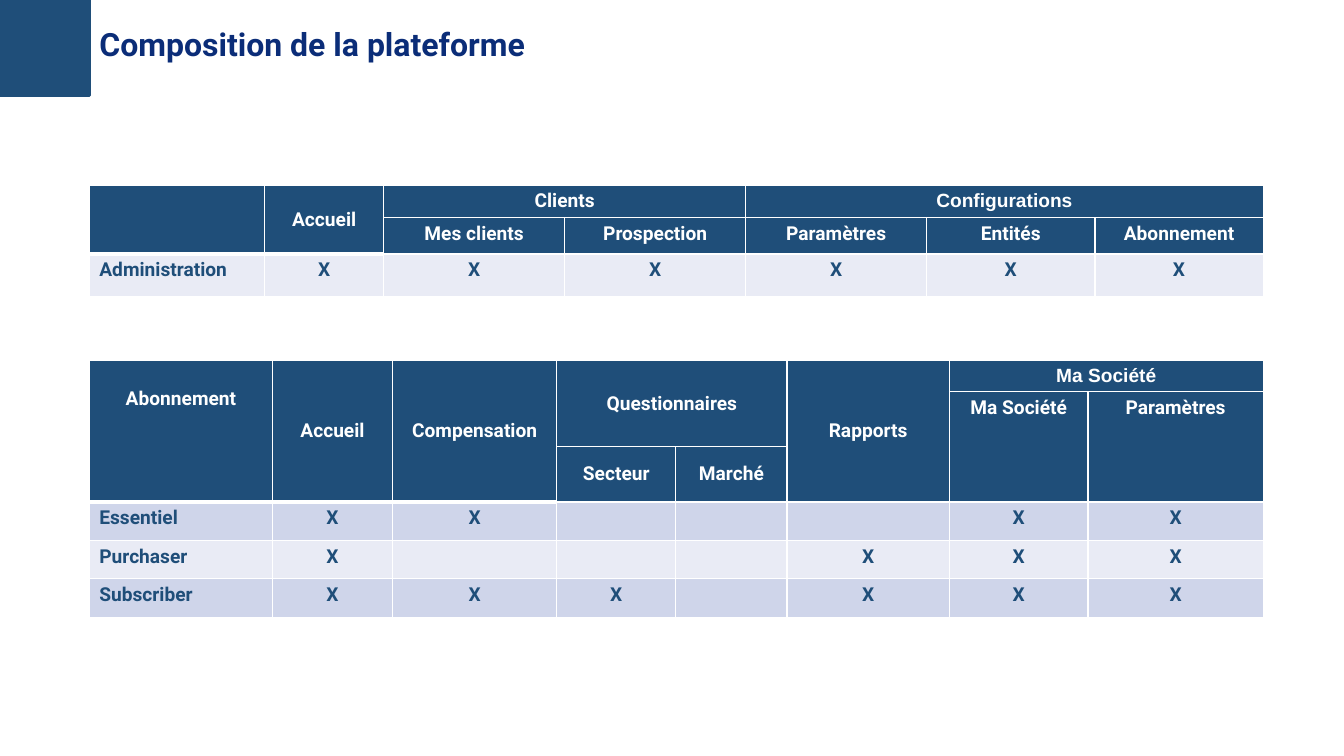
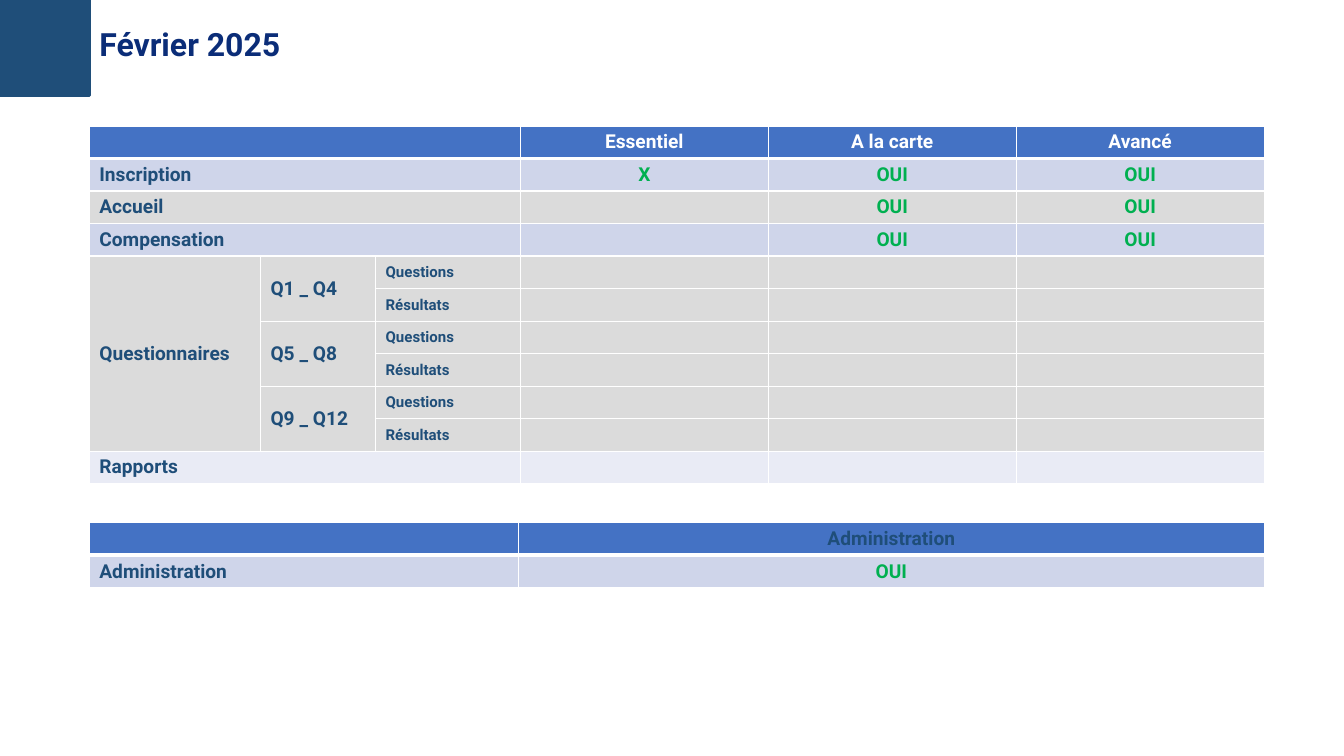
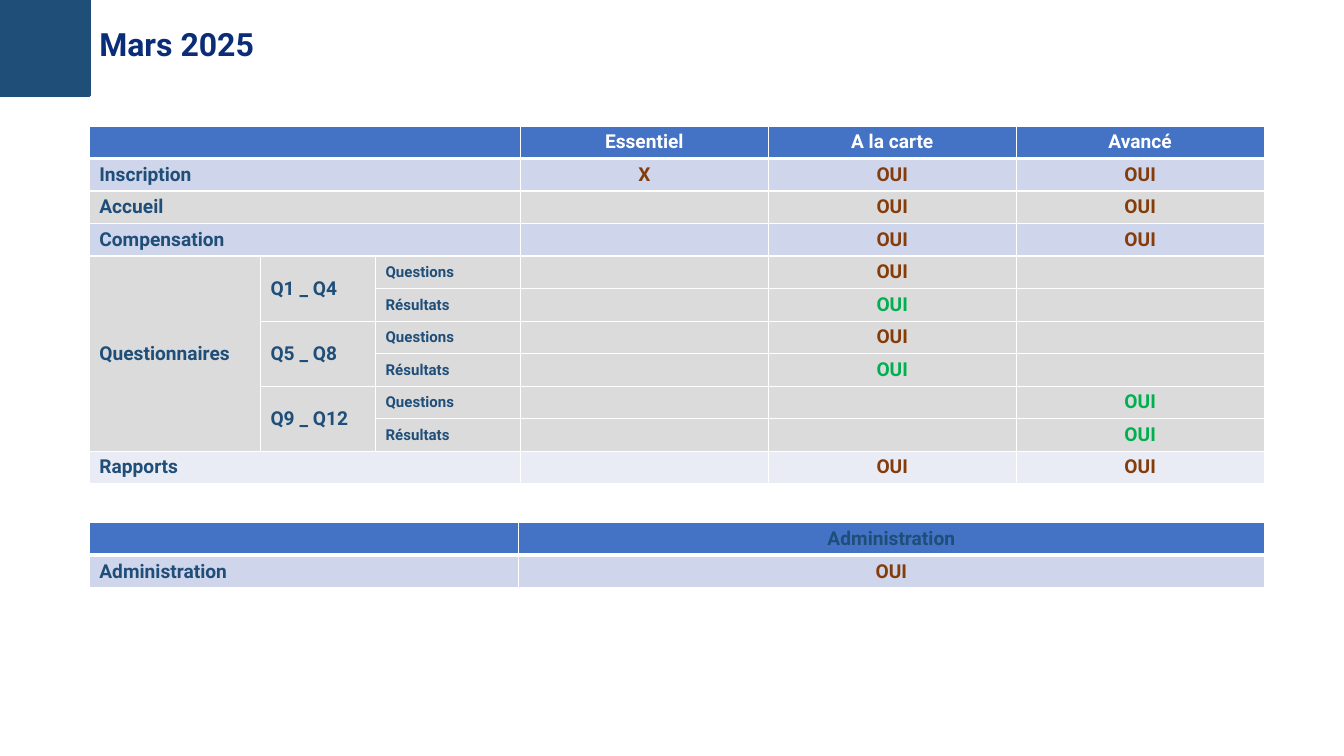
from dataclasses import dataclass

from lxml import etree
from pptx import Presentation
from pptx.dml.color import RGBColor
from pptx.enum import shapes, text
from pptx.oxml import ns
from pptx.util import Inches, Pt


@dataclass(frozen=True)
class Theme:
    navy: str = "1F4E79"
    title: str = "0B2D78"
    blue: str = "4472C4"
    lavender: str = "CFD5EA"
    pale: str = "E9EBF5"
    grey: str = "DBDBDB"
    white: str = "FFFFFF"
    green: str = "00B050"
    brown: str = "843C0B"
    font: str = "Roboto"
    alt_font: str = "Arial"
    title_size: float = 23.4
    body_size: float = 14
    small_size: float = 11
    rule: float = 1
    thick_rule: float = 3


T = Theme()
LEFT, WIDTH = 0.91, 11.94
TOP = {"anchor": text.MSO_ANCHOR.TOP}
ALT = {"font": T.alt_font}
SMALL = {"size": T.small_size}
NEW = {"color": T.green}

ADMIN_MODULES = {
    "top": 1.88,
    "cols": [1.78, 1.21, 1.84, 1.84, 1.84, 1.71, 1.71],
    "heights": [0.33, 0.37, 0.43],
    "rows": [
        ["", "Accueil", "Clients", "", "Configurations", "", ""],
        ["", "", "Mes clients", "Prospection", "Paramètres", "Entités", "Abonnement"],
        ["Administration"] + ["X"] * 6,
    ],
    "fills": [T.navy, T.navy, T.pale],
    "spans": {(0, 0): (2, 1), (0, 1): (2, 1), (0, 2): (1, 2), (0, 4): (1, 3)},
    "headers": 2, "labels": 1, "thick": 2, "mark": T.navy, "body": TOP,
    "special": {(0, 4): ALT, **{(1, col): TOP for col in range(2, 7)}},
}

OFFER_MODULES = {
    "top": 3.66,
    "cols": [1.86, 1.22, 1.67, 1.21, 1.13, 1.65, 1.41, 1.78],
    "heights": [0.32, 0.56, 0.55, 0.39, 0.39, 0.39],
    "rows": [
        ["Abonnement", "Accueil", "Compensation", "Questionnaires", "", "Rapports", "Ma Société", ""],
        ["", "", "", "", "", "", "Ma Société", "Paramètres"],
        ["", "", "", "Secteur", "Marché", "", "", ""],
        ["Essentiel", "X", "X", "", "", "", "X", "X"],
        ["Purchaser", "X", "", "", "", "X", "X", "X"],
        ["Subscriber", "X", "X", "X", "", "X", "X", "X"],
    ],
    "fills": [T.navy] * 3 + [T.lavender, T.pale, T.lavender],
    "spans": {(0, 0): (3, 1), (0, 1): (3, 1), (0, 2): (3, 1), (0, 3): (2, 2),
              (0, 5): (3, 1), (0, 6): (1, 2), (1, 6): (2, 1), (1, 7): (2, 1)},
    "headers": 3, "labels": 1, "thick": 3, "mark": T.navy, "body": TOP,
    "special": {(0, 0): {**TOP, "margin": 0.28}, (0, 6): {**ALT, **TOP},
                (1, 6): TOP, (1, 7): TOP},
}

PLAN_LABELS = [
    ["Inscription", "", ""],
    ["Accueil", "", ""],
    ["Compensation", "", ""],
    ["Questionnaires", "Q1 _ Q4", "Questions"],
    ["", "", "Résultats"],
    ["", "Q5 _ Q8", "Questions"],
    ["", "", "Résultats"],
    ["", "Q9 _ Q12", "Questions"],
    ["", "", "Résultats"],
    ["Rapports", "", ""],
]
OPENING = [["X", "OUI", "OUI"], ["", "OUI", "OUI"], ["", "OUI", "OUI"]]
NONE, CARTE, ADVANCED = ["", "", ""], ["", "OUI", ""], ["", "", "OUI"]
FEBRUARY = OPENING + [NONE] * 7
MARCH = OPENING + [CARTE] * 4 + [ADVANCED] * 2 + [["", "OUI", "OUI"]]
MARCH_NEW = [(5, 4), (7, 4), (8, 5), (9, 5)]


def plan_tables(marks, mark, fresh=()):
    offers = {
        "top": 1.28,
        "cols": [1.74, 1.17, 1.47, 2.52, 2.52, 2.52],
        "heights": [0.33] * 11,
        "rows": [["", "", "", "Essentiel", "A la carte", "Avancé"]]
        + [label + row for label, row in zip(PLAN_LABELS, marks)],
        "fills": [T.blue, T.lavender, T.grey, T.lavender] + [T.grey] * 6 + [T.pale],
        "spans": {**{(row, 0): (1, 3) for row in (0, 1, 2, 3, 10)},
                  (4, 0): (6, 1), **{(row, 1): (2, 1) for row in (4, 6, 8)}},
        "headers": 1, "labels": 3, "thick": 6, "mark": mark, "body": {},
        "special": {**{(row, 2): SMALL for row in range(4, 10)},
                    **{place: NEW for place in fresh}},
    }
    administration = {
        "top": 5.31,
        "cols": [4.36, 7.58],
        "heights": [0.33] * 2,
        "rows": [["", "Administration"], ["Administration", "OUI"]],
        "fills": [T.blue, T.lavender],
        "spans": {},
        "headers": 1, "labels": 1, "thick": 2, "mark": mark, "body": {},
        "special": {(0, 1): {"color": T.navy}},
    }
    return [offers, administration]


SLIDES = [
    ("Composition de la plateforme", [OFFER_MODULES, ADMIN_MODULES]),
    ("Février 2025", plan_tables(FEBRUARY, T.green)),
    ("Mars 2025", plan_tables(MARCH, T.brown, MARCH_NEW)),
]


def rgb(color):
    return RGBColor.from_string(color)


def set_font(paragraph, size, color, name=T.font):
    paragraph.font.name = name
    paragraph.font.size = Pt(size)
    paragraph.font.bold = True
    paragraph.font.color.rgb = rgb(color)


def set_borders(cell, bottom):
    properties = cell._tc.get_or_add_tcPr()
    for side, width in zip("LRTB", [T.rule] * 3 + [bottom]):
        border = etree.SubElement(properties, ns.qn(f"a:ln{side}"), w=str(Pt(width)))
        solid = etree.SubElement(border, ns.qn("a:solidFill"))
        etree.SubElement(solid, ns.qn("a:srgbClr"), val=T.white)


def cell_style(content, row, col):
    style = {"font": T.font, "size": T.body_size, "margin": 0.05,
             "anchor": text.MSO_ANCHOR.MIDDLE, "align": text.PP_ALIGN.CENTER}
    if row < content["headers"]:
        style["color"] = T.white
    elif col < content["labels"]:
        style.update(content["body"], color=T.navy, align=text.PP_ALIGN.LEFT)
    else:
        style.update(content["body"], color=content["mark"])
    return {**style, **content["special"].get((row, col), {})}


def fill_cell(cell, content, row, col):
    style = cell_style(content, row, col)
    thick = col < content["thick"] and any(
        (r, c) == (row, col) for r in (0, content["headers"] - 1) for c in [col]
        if r == content["headers"] - 1 or content["spans"].get((r, c), (1, 1))[0] > 1)
    set_borders(cell, T.thick_rule if thick else T.rule)
    cell.fill.solid()
    cell.fill.fore_color.rgb = rgb(content["fills"][row])
    cell.vertical_anchor = style["anchor"]
    cell.margin_top = Inches(style["margin"])
    cell.text = content["rows"][row][col]
    paragraph = cell.text_frame.paragraphs[0]
    paragraph.alignment = style["align"]
    set_font(paragraph, style["size"], style["color"], style["font"])


def add_grid(slide, content):
    rows, cols = len(content["rows"]), len(content["cols"])
    grid = slide.shapes.add_table(
        rows, cols, Inches(LEFT), Inches(content["top"]),
        Inches(WIDTH), Inches(sum(content["heights"]))).table
    grid.first_row = grid.horz_banding = False
    for column, width in zip(grid.columns, content["cols"]):
        column.width = Inches(width)
    for line, height in zip(grid.rows, content["heights"]):
        line.height = Inches(height)
    for row in range(rows):
        for col in range(cols):
            fill_cell(grid.cell(row, col), content, row, col)
    for (row, col), (down, across) in content["spans"].items():
        grid.cell(row, col).merge(grid.cell(row + down - 1, col + across - 1))


def add_title(slide, wording):
    title = slide.shapes.title
    title.left, title.top = Inches(LEFT), Inches(0)
    title.width, title.height = Inches(WIDTH), Inches(0.93)
    frame = title.text_frame
    frame.text = wording
    frame.vertical_anchor = text.MSO_ANCHOR.MIDDLE
    frame.margin_left = frame.margin_right = Inches(0.1)
    frame.margin_top = frame.margin_bottom = Inches(0.1)
    heading = frame.paragraphs[0]
    heading.alignment = text.PP_ALIGN.LEFT
    heading.line_spacing = 0.9
    set_font(heading, T.title_size, T.title)


def move_corner_to_layout(slide):
    corner = slide.shapes.add_shape(
        shapes.MSO_SHAPE.RECTANGLE, 0, 0, Inches(LEFT), Inches(0.97))
    corner.shadow.inherit = False
    corner.fill.solid()
    corner.fill.fore_color.rgb = rgb(T.navy)
    corner.line.color.rgb = rgb(T.navy)
    corner.line.width = Pt(2)
    slide.slide_layout.shapes.element.insert(2, corner.element)


def main():
    deck = Presentation()
    deck.slide_width, deck.slide_height = Inches(13.66), Inches(7.68)
    title_only = deck.slide_layouts[5]
    for number, (wording, tables) in enumerate(SLIDES):
        slide = deck.slides.add_slide(title_only)
        if number == 0:
            move_corner_to_layout(slide)
        add_title(slide, wording)
        for content in tables:
            add_grid(slide, content)
    deck.save("out.pptx")


if __name__ == "__main__":
    main()
